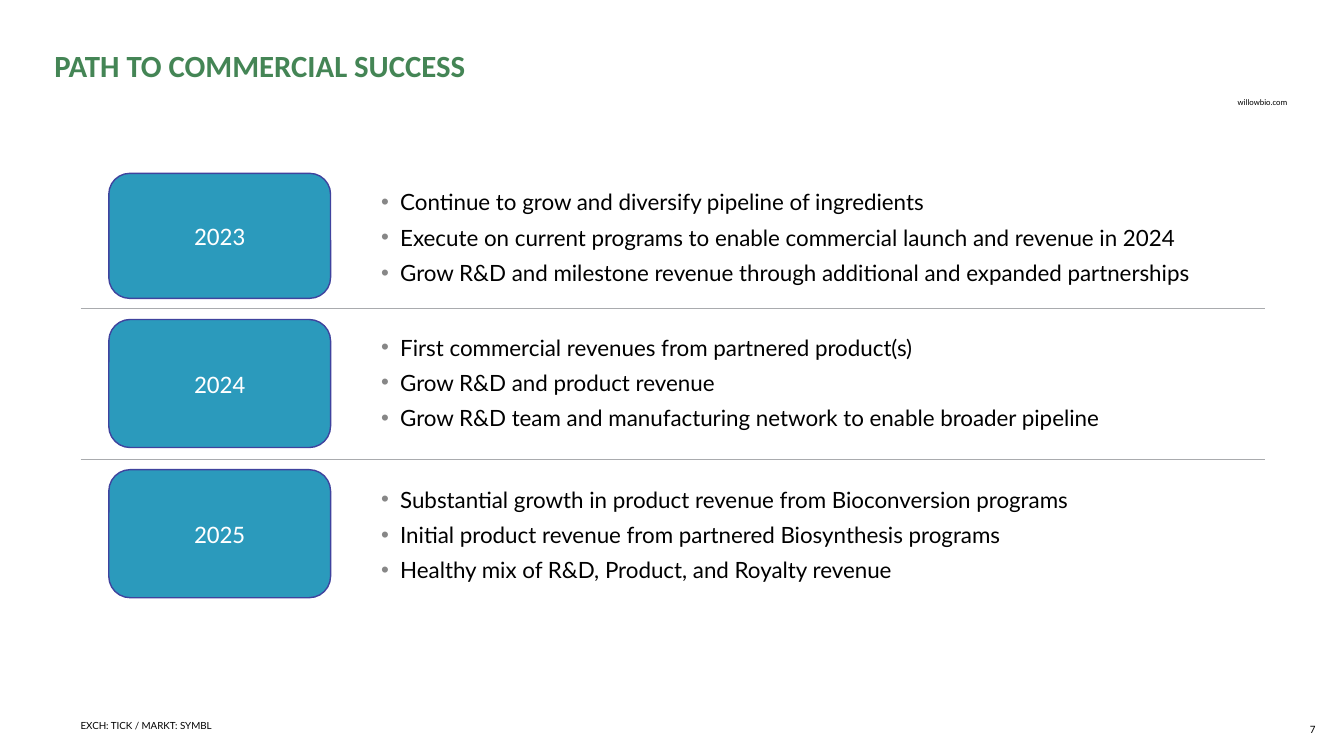
from dataclasses import dataclass

import pptx
import pptx.dml.color
import pptx.enum.shapes
import pptx.enum.text
import pptx.oxml
import pptx.oxml.ns
import pptx.util

Pt = pptx.util.Pt
Align = pptx.enum.text.PP_ALIGN
Anchor = pptx.enum.text.MSO_ANCHOR
AutoSize = pptx.enum.text.MSO_AUTO_SIZE


@dataclass(frozen=True)
class Theme:
    heading_font: str = "Calibri"
    body_font: str = "Lato"
    green: str = "448555"
    blue: str = "2B9ABC"
    outline: str = "3F439E"
    grey: str = "A9ABAE"
    bullet: str = "878787"
    black: str = "000000"
    white: str = "FFFFFF"
    title_size: float = 22
    year_size: float = 18
    list_size: float = 16
    number_size: float = 8
    ticker_size: float = 7
    site_size: float = 6


@dataclass(frozen=True)
class Milestone:
    year: str
    card_top: float
    card_height: float
    list_top: float
    list_width: float
    placeholder: int
    goals: tuple[str, ...]


THEME = Theme()
MILESTONES = (
    Milestone("2023", 123.84, 89.28, 134.64, 645.12, 1, (
        "Continue to grow and diversify pipeline of ingredients",
        "Execute on current programs to enable commercial launch and revenue in 2024",
        "Grow R&D and milestone revenue through additional and expanded partnerships",
    )),
    Milestone("2024", 228.24, 91.44, 238.32, 588.24, 2, (
        "First commercial revenues from partnered product(s)",
        "Grow R&D and product revenue",
        "Grow R&D team and manufacturing network to enable broader pipeline",
    )),
    Milestone("2025", 335.52, 91.44, 347.04, 588.24, 4, (
        "Substantial growth in product revenue from Bioconversion programs",
        "Initial product revenue from partnered Biosynthesis programs",
        "Healthy mix of R&D, Product, and Royalty revenue",
    )),
)
RULE_TOPS = (220.32, 328.32)
CARD_LEFT, CARD_WIDTH = 77.76, 158.4
LIST_LEFT, LIST_HEIGHT = 236.16, 70.56
RULE_LEFT, RULE_RIGHT = 57.6, 903.6


def color(code: str) -> pptx.dml.color.RGBColor:
    return pptx.dml.color.RGBColor.from_string(code)


def place(shape, left: float, top: float, width: float, height: float) -> None:
    shape.left, shape.top = Pt(left), Pt(top)
    shape.width, shape.height = Pt(width), Pt(height)


def add_bullet(para) -> None:
    properties = para._p.get_or_add_pPr()
    properties.set("marL", str(Pt(49.68)))
    properties.set("indent", str(Pt(-13.68)))
    namespace = pptx.oxml.ns.nsdecls("a")
    for markup in (
        f'<a:buClr {namespace}><a:srgbClr val="{THEME.bullet}"/></a:buClr>',
        f'<a:buFont {namespace} typeface="Arial"/>',
        f'<a:buChar {namespace} char="•"/>',
    ):
        properties.append(pptx.oxml.parse_xml(markup))


def write(shape, *lines: str, size: float, ink: str = THEME.black,
          font: str = THEME.heading_font, bold: bool = False, align=Align.LEFT,
          anchor=Anchor.TOP, inset: bool = False, wrap: bool = True,
          bullets: bool = False) -> None:
    frame = shape.text_frame
    frame.word_wrap = wrap
    frame.auto_size = AutoSize.NONE
    frame.vertical_anchor = anchor
    frame.margin_left = frame.margin_right = Pt(7.2 if inset else 0)
    frame.margin_top = frame.margin_bottom = Pt(3.6 if inset else 0)
    for index, line in enumerate(lines):
        para = frame.add_paragraph() if index else frame.paragraphs[0]
        para.alignment = align
        para.space_before = Pt(0)
        if bullets:
            para.level = 1
            para.space_after = Pt(6)
            add_bullet(para)
        span = para.add_run()
        span.text = line
        span.font.name = font
        span.font.size = Pt(size)
        span.font.bold = bold
        span.font.color.rgb = color(ink)


def add_label(page, text: str, left: float, top: float, width: float,
              height: float, **style) -> None:
    box = page.shapes.add_textbox(Pt(left), Pt(top), Pt(width), Pt(height))
    write(box, text, **style)


def add_rule(page, top: float) -> None:
    rule = page.shapes.add_connector(
        pptx.enum.shapes.MSO_CONNECTOR.STRAIGHT,
        Pt(RULE_LEFT), Pt(top), Pt(RULE_RIGHT), Pt(top))
    rule.line.color.rgb = color(THEME.grey)
    rule.line.width = Pt(1.13)
    rule._element.spPr.append(pptx.oxml.parse_xml(
        f'<a:effectLst {pptx.oxml.ns.nsdecls("a")}/>'))


def add_milestone(page, item: Milestone) -> None:
    card = page.shapes.add_shape(
        pptx.enum.shapes.MSO_SHAPE.ROUNDED_RECTANGLE,
        Pt(CARD_LEFT), Pt(item.card_top), Pt(CARD_WIDTH), Pt(item.card_height))
    card.shadow.inherit = False
    card.fill.solid()
    card.fill.fore_color.rgb = color(THEME.blue)
    card.line.color.rgb = color(THEME.outline)
    card.line.width = Pt(1)
    write(card, item.year, size=THEME.year_size, ink=THEME.white,
          align=Align.CENTER, anchor=Anchor.MIDDLE, inset=True)

    goals = page.placeholders[item.placeholder]
    place(goals, LIST_LEFT, item.list_top, item.list_width, LIST_HEIGHT)
    write(goals, *item.goals, size=THEME.list_size, font=THEME.body_font,
          bullets=True)


def main() -> None:
    deck = pptx.Presentation()
    deck.slide_width, deck.slide_height = Pt(960), Pt(540)
    page = deck.slides.add_slide(deck.slide_layouts.get_by_name("Comparison"))

    # Title
    title = page.shapes.title
    place(title, 38.88, 33.12, 617.76, 26.64)
    write(title, "PATH TO COMMERCIAL SUCCESS", size=THEME.title_size,
          ink=THEME.green, bold=True)

    # Yearly milestones and the rules between them
    for item in MILESTONES:
        add_milestone(page, item)
    for top in RULE_TOPS:
        add_rule(page, top)

    # Web address, tickers and page number
    add_label(page, "willowbio.com", 846, 65.52, 111.6, 14.4,
              size=THEME.site_size, align=Align.CENTER, inset=True)
    add_label(page, "EXCH: TICK / MARKT: SYMBL", 57.6, 514.08, 102.96, 8.64,
              size=THEME.ticker_size, font=THEME.body_font, wrap=False)
    add_label(page, "7", 910.8, 506.16, 36, 28.8, size=THEME.number_size,
              align=Align.RIGHT, anchor=Anchor.MIDDLE, inset=True)

    # Remove the placeholder left empty
    for spare in list(page.placeholders):
        if not spare.text_frame.text:
            spare.element.getparent().remove(spare.element)

    deck.save("out.pptx")


if __name__ == "__main__":
    main()
